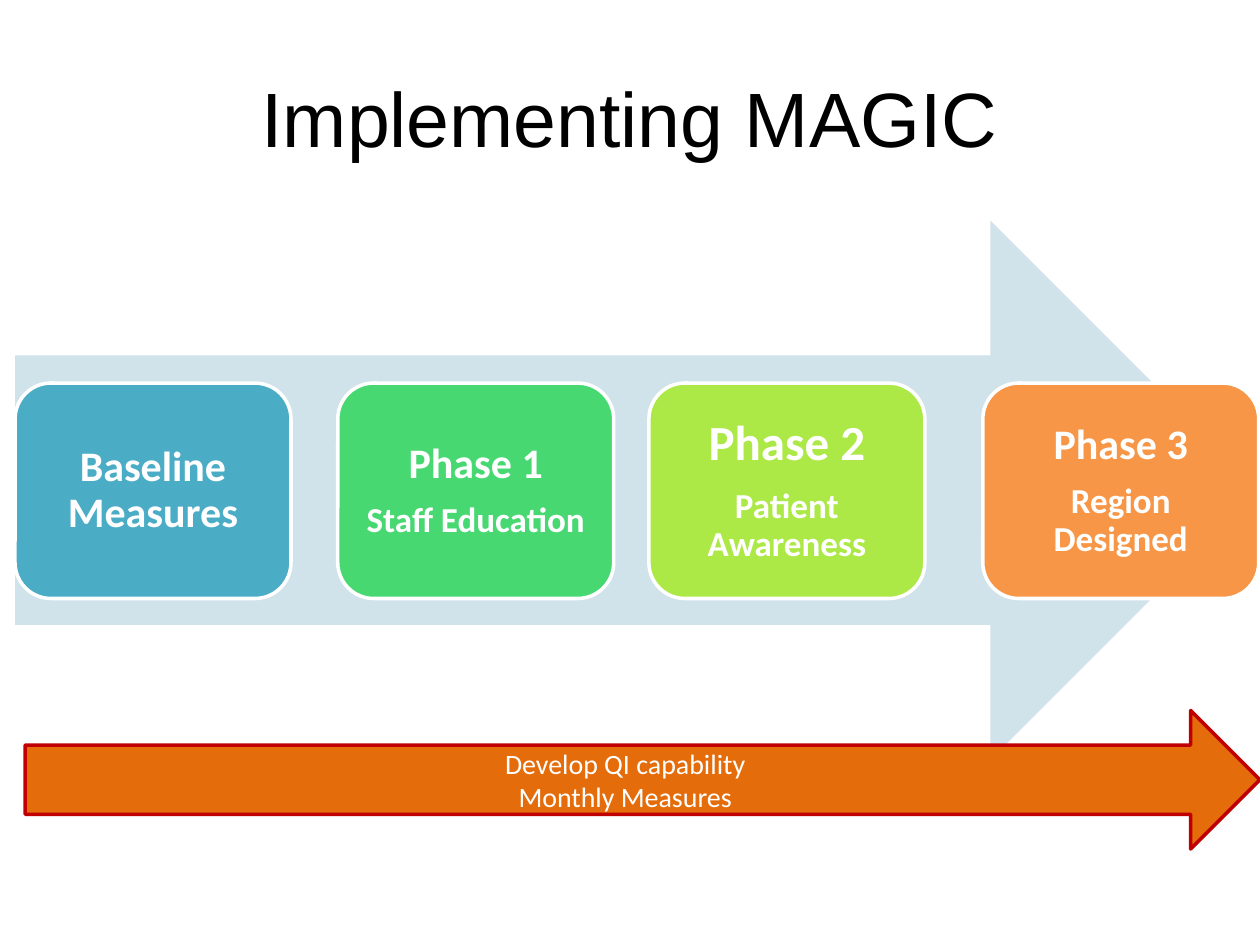
from pptx import Presentation
from pptx.dml.color import RGBColor
from pptx.enum import shapes, text
from pptx.util import Pt

WHITE = RGBColor(0xFF, 0xFF, 0xFF)
BLACK = RGBColor(0x00, 0x00, 0x00)
PALE_BLUE = RGBColor(0xD0, 0xE3, 0xEA)
BLUE = RGBColor(0x4B, 0xAC, 0xC6)
GREEN = RGBColor(0x47, 0xD8, 0x72)
LIME = RGBColor(0xAC, 0xE9, 0x46)
ORANGE = RGBColor(0xF7, 0x96, 0x46)
DARK_ORANGE = RGBColor(0xE4, 0x6C, 0x0A)
RED = RGBColor(0xC0, 0x00, 0x00)

CARD_TOP, CARD_WIDTH, CARD_HEIGHT = 218.9, 157.7, 123.1
# left, fill, inset, heading shift, (text, size) lines
CARDS = [
    (8.6, BLUE, 7.2, 0, [("Baseline Measures", 24)]),
    (193, GREEN, 7.2, 10.8, [("Phase 1", 24), ("Staff Education", 20)]),
    (370.8, LIME, 8.4, 12.6, [("Phase 2", 28), ("Patient Awareness", 20)]),
    (561.6, ORANGE, 7.2, 5.4, [("Phase 3", 24), ("Region Designed", 20)]),
]


def add_block(slide, kind, left, top, width, height, fill, line=None):
    """Add a flat preset shape, outlined only when a line colour is given."""
    shape = slide.shapes.add_shape(kind, Pt(left), Pt(top), Pt(width), Pt(height))
    shape.shadow.inherit = False
    shape.fill.solid()
    shape.fill.fore_color.rgb = fill
    if line is None:
        shape.line.fill.background()
    else:
        shape.line.color.rgb = line
        shape.line.width = Pt(2)
    return shape


def write_lines(shape, lines, font="Calibri", color=WHITE, bold=False):
    """Write centred (text, size) lines and return their paragraphs."""
    frame = shape.text_frame
    frame.word_wrap = True
    frame.vertical_anchor = text.MSO_ANCHOR.MIDDLE
    for index, (words, size) in enumerate(lines):
        paragraph = frame.add_paragraph() if index else frame.paragraphs[0]
        paragraph.text = words
        paragraph.alignment = text.PP_ALIGN.CENTER
        paragraph.font.name = font
        paragraph.font.size = Pt(size)
        paragraph.font.bold = bold
        paragraph.font.color.rgb = color
    return frame.paragraphs


def add_title(slide, words):
    box = slide.shapes.add_textbox(Pt(36), Pt(21.6), Pt(648), Pt(90))
    write_lines(box, [(words, 44)], font="Arial", color=BLACK)


def add_card(slide, left, fill, inset, heading_shift, lines):
    card = add_block(slide, shapes.MSO_SHAPE.ROUNDED_RECTANGLE, left, CARD_TOP,
                     CARD_WIDTH, CARD_HEIGHT, fill, WHITE)
    frame = card.text_frame
    frame.margin_left = frame.margin_right = Pt(inset)
    frame.margin_top = frame.margin_bottom = Pt(inset)
    paragraphs = write_lines(card, lines, bold=True)
    for paragraph, (_, size) in zip(paragraphs, lines):
        paragraph.line_spacing = 0.9
        paragraph.space_after = Pt(round(size * 0.35, 1))
    if heading_shift:
        # A negative first-line indent moves the centred heading to the left.
        properties = paragraphs[0]._p.get_or_add_pPr()
        properties.set("marL", "0")
        properties.set("indent", str(-Pt(heading_shift)))


def main():
    presentation = Presentation()
    presentation.slide_width, presentation.slide_height = Pt(720), Pt(540)
    slide = presentation.slides.add_slide(presentation.slide_layouts[6])

    add_title(slide, "Implementing MAGIC")
    right_arrow = shapes.MSO_SHAPE.RIGHT_ARROW
    add_block(slide, right_arrow, 8.6, 126, 711.4, 308.2, PALE_BLUE)
    for card in CARDS:
        add_card(slide, *card)
    support_arrow = add_block(slide, right_arrow, 14.4, 406, 705.6, 79.2,
                              DARK_ORANGE, RED)
    write_lines(support_arrow, [("Develop QI capability", 16),
                                ("Monthly Measures", 16)])
    presentation.save("out.pptx")


if __name__ == "__main__":
    main()
